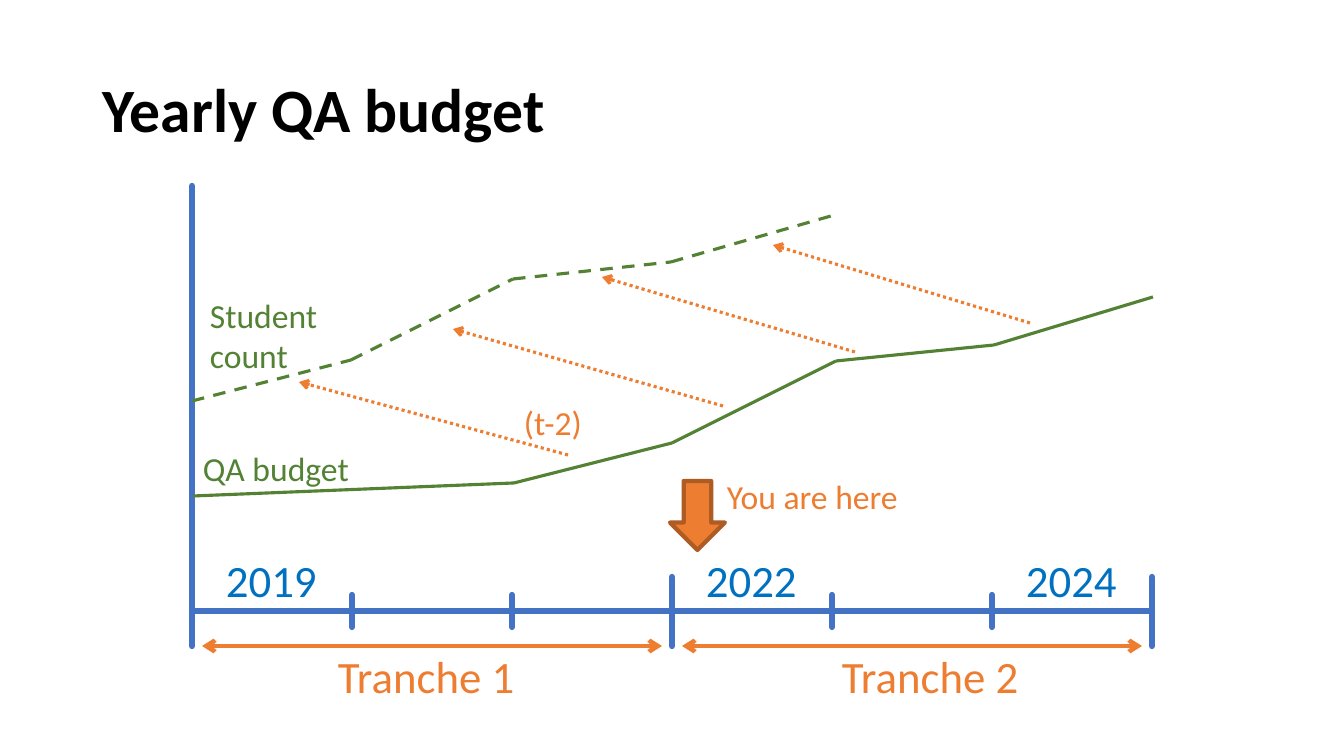
from itertools import pairwise

from lxml.etree import SubElement
from pptx import Presentation
from pptx.dml.color import RGBColor
from pptx.enum.dml import MSO_LINE
from pptx.enum.shapes import MSO_CONNECTOR, MSO_SHAPE
from pptx.enum.text import MSO_ANCHOR, MSO_AUTO_SIZE
from pptx.oxml.ns import qn
from pptx.util import Pt

TITLE = "Yearly QA budget"
YEAR_LABELS = {0: "2019", 3: "2022", 5: "2024"}
YEAR_COUNT, TRANCHE_YEARS = 6, 3
# label, label left
TRANCHES = [("Tranche 1", 328), ("Tranche 2", 832)]
STUDENT_COUNT = [(192, 401), (351, 360), (513, 279), (671, 262), (831, 216)]
QA_BUDGET = [(193, 496), (514, 483), (672, 443), (836, 361), (994, 345), (1153, 297)]
LAG_ARROWS = [
    ((568, 455), (299, 382)),
    ((723, 406), (453, 329)),
    ((855, 352), (602, 277)),
    ((1030, 323), (773, 245)),
]
# text, box, colour
NOTES = [
    ("Student\vcount", (200, 290, 129, 92), "series"),
    ("QA budget", (193, 443, 167, 50), "series"),
    ("(t-2)", (514, 397, 80, 50), "accent"),
    ("You are here", (717, 471, 194, 50), "accent"),
]
HERE_ARROW = (670, 481, 55, 69)

THEME = {
    "font": "Calibri",
    "title": "000000", "axis": "4472C4", "year": "0070C0",
    "series": "548235", "accent": "ED7D31", "accent_edge": "AF5C24",
    "title_size": 44, "scale_size": 32, "note_size": 24,
    "axis_width": 4.5, "span_width": 3, "series_width": 2.25,
}
EMU_PER_PX = 914400 / 100.8
AXIS_LEFT, AXIS_TOP, AXIS_Y, YEAR_STEP = 192, 186, 611, 160
MAJOR_TICK, MINOR_TICK = (577, 646), (595, 627)
SPAN_Y, SPAN_GAP = 646, 10


def px(length):
    return round(length * EMU_PER_PX)


def color(role):
    return RGBColor.from_string(THEME[role])


def year_x(index):
    return AXIS_LEFT + index * YEAR_STEP


def add_line(slide, start, end, role, width, dash=None, arrows=(), rounded=False):
    """Draw a line; arrows names the ends that carry a head."""
    line = slide.shapes.add_connector(
        MSO_CONNECTOR.STRAIGHT, *map(px, (*start, *end)))
    line.line.color.rgb = color(role)
    line.line.width = Pt(width)
    if dash:
        line.line.dash_style = dash
    properties = line.line._get_or_add_ln()
    if rounded:
        properties.set("cap", "rnd")
    for arrow_end in arrows:
        SubElement(properties, qn(f"a:{arrow_end}"), type="arrow")
    SubElement(line._element.spPr, qn("a:effectLst"))


def add_text(slide, text, box, role, size, wrap=False):
    label = slide.shapes.add_textbox(*map(px, box))
    frame = label.text_frame
    frame.word_wrap = wrap
    frame.text = text
    if not wrap:
        frame.auto_size = MSO_AUTO_SIZE.SHAPE_TO_FIT_TEXT
    for run in frame.paragraphs[0].runs:
        run.font.name = THEME["font"]
        run.font.size = Pt(THEME[size])
        run.font.color.rgb = color(role)
    return frame


def add_title(slide):
    frame = add_text(slide, TITLE, (93, 40, 1159, 146), "title", "title_size", wrap=True)
    frame.vertical_anchor = MSO_ANCHOR.MIDDLE
    frame.paragraphs[0].line_spacing = 0.9
    frame.paragraphs[0].runs[0].font.bold = True


def add_axes(slide):
    origin = (AXIS_LEFT, AXIS_Y)
    strokes = [(origin, (year_x(YEAR_COUNT), AXIS_Y)), (origin, (AXIS_LEFT, AXIS_TOP))]
    for index in range(YEAR_COUNT + 1):
        top, bottom = MINOR_TICK if index % TRANCHE_YEARS else MAJOR_TICK
        strokes.append(((year_x(index), top), (year_x(index), bottom)))
    for start, end in strokes:
        add_line(slide, start, end, "axis", THEME["axis_width"], rounded=True)
    for index, year in YEAR_LABELS.items():
        add_text(slide, year, (year_x(index) + 24, 548, 112, 65), "year", "scale_size")


def add_tranches(slide):
    for index, (tranche, label_left) in enumerate(TRANCHES):
        left = year_x(index * TRANCHE_YEARS) + SPAN_GAP
        right = year_x((index + 1) * TRANCHE_YEARS) - SPAN_GAP
        add_line(slide, (left, SPAN_Y), (right, SPAN_Y), "accent",
                 THEME["span_width"], arrows=("headEnd", "tailEnd"))
        add_text(slide, tranche, (label_left, 644, 199, 65), "accent", "scale_size")


def add_series(slide):
    width = THEME["series_width"]
    for points, dash in ((STUDENT_COUNT, MSO_LINE.DASH), (QA_BUDGET, None)):
        for start, end in pairwise(points):
            add_line(slide, start, end, "series", width, dash)
    for start, end in LAG_ARROWS:
        add_line(slide, start, end, "accent", width, MSO_LINE.ROUND_DOT, ("tailEnd",))


def add_here_arrow(slide):
    here = slide.shapes.add_shape(MSO_SHAPE.DOWN_ARROW, *map(px, HERE_ARROW))
    here.shadow.inherit = False
    here.fill.solid()
    here.fill.fore_color.rgb = color("accent")
    here.line.color.rgb = color("accent_edge")
    here.line.width = Pt(THEME["span_width"])


def main():
    deck = Presentation()
    deck.slide_width, deck.slide_height = px(1344), px(756)
    slide = deck.slides.add_slide(deck.slide_layouts[6])
    add_axes(slide)
    add_tranches(slide)
    add_series(slide)
    add_here_arrow(slide)
    for text, box, role in NOTES:
        add_text(slide, text, box, role, "note_size")
    add_title(slide)
    deck.save("out.pptx")


if __name__ == "__main__":
    main()
